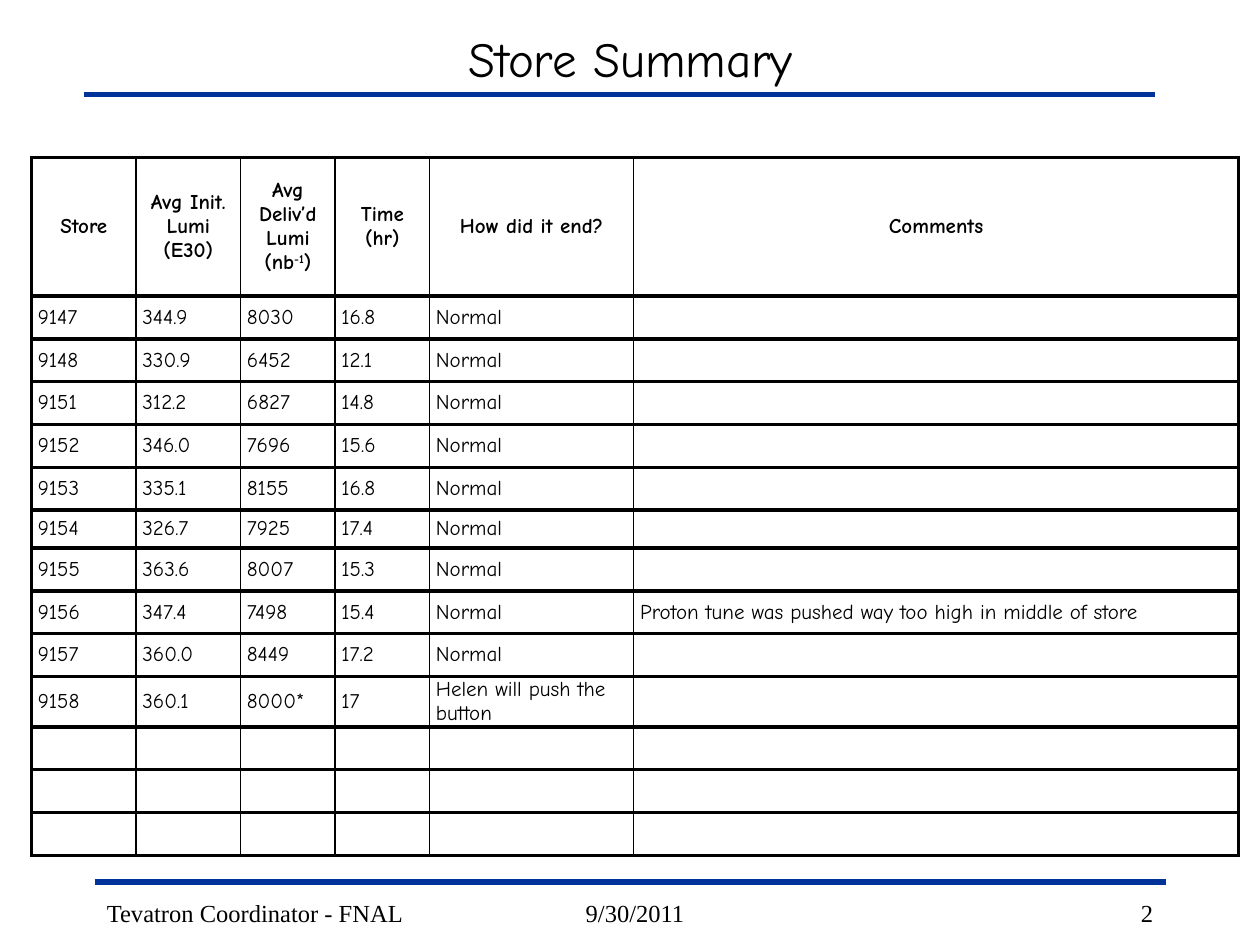
"""Build the store summary slide with its table of stores."""
from lxml import etree
from pptx import Presentation
from pptx.dml.color import RGBColor
from pptx.enum.shapes import MSO_CONNECTOR
from pptx.enum.text import MSO_ANCHOR, MSO_AUTO_SIZE, PP_ALIGN
from pptx.oxml.ns import qn
from pptx.util import Inches, Pt

LEFT, CENTER, RIGHT = PP_ALIGN.LEFT, PP_ALIGN.CENTER, PP_ALIGN.RIGHT
MIDDLE = MSO_ANCHOR.MIDDLE
NO_AUTOFIT = MSO_AUTO_SIZE.NONE
STRAIGHT = MSO_CONNECTOR.STRAIGHT

COLORS = {"text": "000000", "rule": "003399"}
HAND_FONT, FOOTER_FONT = "Comic Neue", "Times New Roman"
THICK, THIN = 2.25, 1
COLUMN_WIDTHS = [0.83, 0.83, 0.75, 0.75, 1.62, 4.8]
HEADER_HEIGHT, ROW_HEIGHT, SHORT_ROW_HEIGHT = 1.1, 0.34, 0.3
SHORT_ROW, EMPTY_ROWS = 6, 3
HEADERS = ["Store", "Avg Init. Lumi (E30)", "Avg Deliv’d\nLumi\n(nb^-1^)",
           "Time (hr)", "How did it end?", "Comments"]
STORES = [
    ("9147", "344.9", "8030", "16.8", "Normal", ""),
    ("9148", "330.9", "6452", "12.1", "Normal", ""),
    ("9151", "312.2", "6827", "14.8", "Normal", ""),
    ("9152", "346.0", "7696", "15.6", "Normal", ""),
    ("9153", "335.1", "8155", "16.8", "Normal", ""),
    ("9154", "326.7", "7925", "17.4", "Normal", ""),
    ("9155", "363.6", "8007", "15.3", "Normal", ""),
    ("9156", "347.4", "7498", "15.4", "Normal",
     "Proton tune was pushed way too high in middle of store"),
    ("9157", "360.0", "8449", "17.2", "Normal", ""),
    ("9158", "360.1", "8000*", "17", "Helen will push the button", ""),
]


def write_text(frame, text, size=12, font=HAND_FONT, bold=False, align=LEFT):
    """Fill a text frame, one paragraph a line, with ^ around superscripts."""
    frame.word_wrap = True
    for index, line in enumerate(text.split("\n")):
        paragraph = frame.add_paragraph() if index else frame.paragraphs[0]
        paragraph.alignment = align
        if not line:
            paragraph._p.get_or_add_endParaRPr().set("sz", str(size * 100))
            continue
        for position, part in enumerate(line.split("^")):
            run = paragraph.add_run()
            run.text = part
            run.font.size = Pt(size)
            run.font.name = font
            run.font.bold = bold
            run.font.color.rgb = RGBColor.from_string(COLORS["text"])
            if position % 2:
                run.font._element.set("baseline", "30000")


def add_title(slide, text):
    """Place and format the title placeholder."""
    title = slide.shapes.title
    title.left, title.top = Inches(1.17), Inches(0.17)
    title.width, title.height = Inches(7.67), Inches(0.58)
    title.text_frame.auto_size = NO_AUTOFIT
    title.text_frame.vertical_anchor = MIDDLE
    write_text(title.text_frame, text, size=28, align=CENTER)


def add_rule(slide, left, top):
    """Add a wide horizontal blue rule."""
    rule = slide.shapes.add_connector(
        STRAIGHT, Inches(left), Inches(top), Inches(left + 8.5), Inches(top))
    rule.line.color.rgb = RGBColor.from_string(COLORS["rule"])
    rule.line.width = Pt(3)
    etree.SubElement(rule._element.spPr, qn("a:effectLst"))


def add_footer(slide, text, left, width, align):
    """Add one footer text box."""
    box = slide.shapes.add_textbox(
        Inches(left), Inches(7.08), Inches(width), Inches(0.25))
    write_text(box.text_frame, text, size=14, font=FOOTER_FONT, align=align)


def set_borders(cell, left, right):
    """Draw the four borders of a cell, thick above and below."""
    properties = cell._tc.get_or_add_tcPr()
    widths = {"a:lnL": left, "a:lnR": right, "a:lnT": THICK, "a:lnB": THICK}
    for tag, width in widths.items():
        line = etree.SubElement(properties, qn(tag), w=str(Pt(width)))
        fill = etree.SubElement(line, qn("a:solidFill"))
        etree.SubElement(fill, qn("a:srgbClr"), val=COLORS["text"])


def format_cell(cell, text, column, is_header):
    """Write and format one table cell."""
    last = len(COLUMN_WIDTHS) - 1
    set_borders(cell, THICK if column == 0 else THIN,
                THICK if column == last else THIN)
    cell.fill.background()
    cell.vertical_anchor = MIDDLE
    cell.margin_left = cell.margin_right = Inches(0.1 if is_header else 0.05)
    cell.margin_top = cell.margin_bottom = Inches(0.15 if is_header else 0)
    write_text(cell.text_frame, text, bold=is_header,
               align=CENTER if is_header else LEFT)


def add_store_table(slide):
    """Add the table of stores with its blank rows at the end."""
    blank = ("",) * len(HEADERS)
    rows = [HEADERS, *STORES, *[blank] * EMPTY_ROWS]
    table = slide.shapes.add_table(
        len(rows), len(HEADERS), Inches(0.25), Inches(1.25),
        Inches(9.58), Inches(5.5)).table
    table.first_row = table.horz_banding = False
    for column, width in zip(table.columns, COLUMN_WIDTHS):
        column.width = Inches(width)
    heights = {0: HEADER_HEIGHT, SHORT_ROW: SHORT_ROW_HEIGHT}
    for row_index, values in enumerate(rows):
        height = heights.get(row_index, ROW_HEIGHT)
        table.rows[row_index].height = Inches(height)
        for column_index, value in enumerate(values):
            format_cell(table.cell(row_index, column_index), value,
                        column_index, row_index == 0)


def main():
    """Build and save the presentation."""
    presentation = Presentation()
    presentation.slide_width = Inches(10)
    presentation.slide_height = Inches(7.5)
    slide = presentation.slides.add_slide(presentation.slide_layouts[5])
    add_rule(slide, 0.67, 0.75)
    add_rule(slide, 0.75, 7)
    add_footer(slide, "9/30/2011", 3.5, 3.08, CENTER)
    add_footer(slide, "Tevatron Coordinator - FNAL", 0.75, 2.67, LEFT)
    add_footer(slide, "2", 8.17, 1.08, RIGHT)
    add_title(slide, "Store Summary")
    add_store_table(slide)
    presentation.save("out.pptx")


if __name__ == "__main__":
    main()
